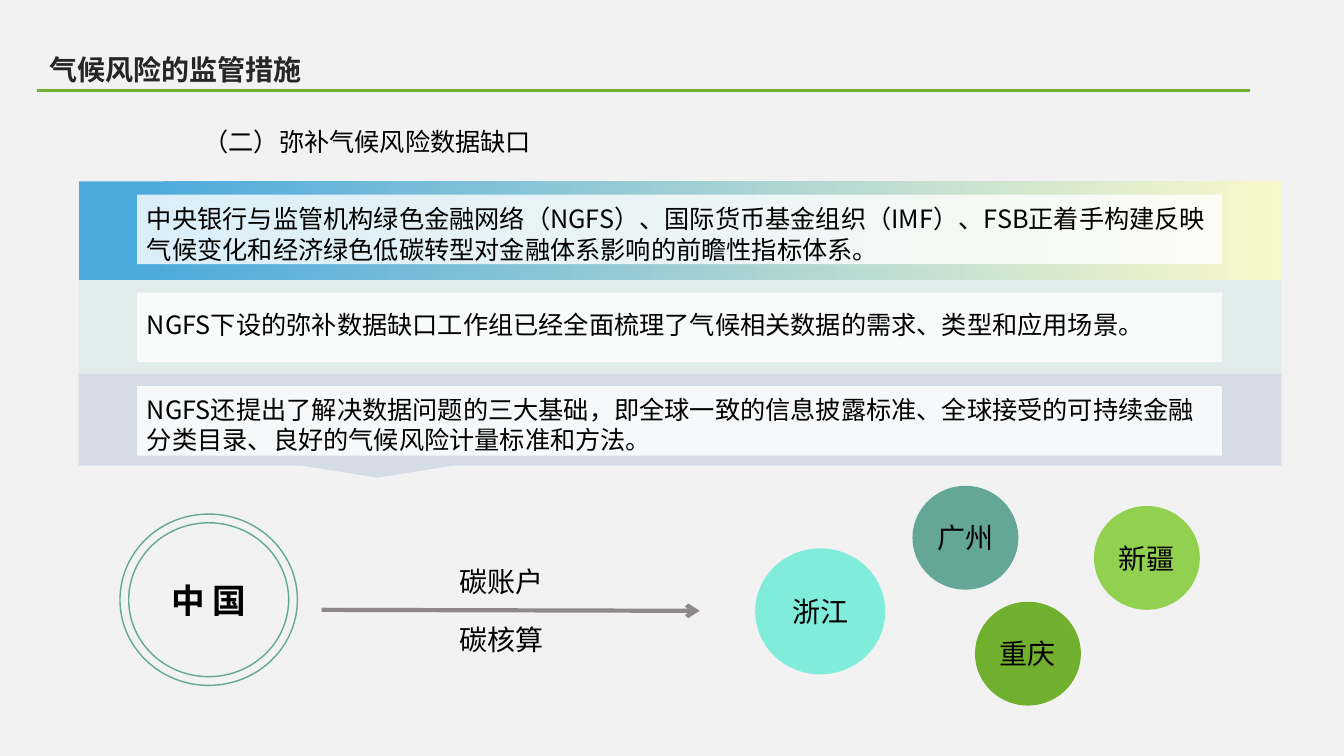
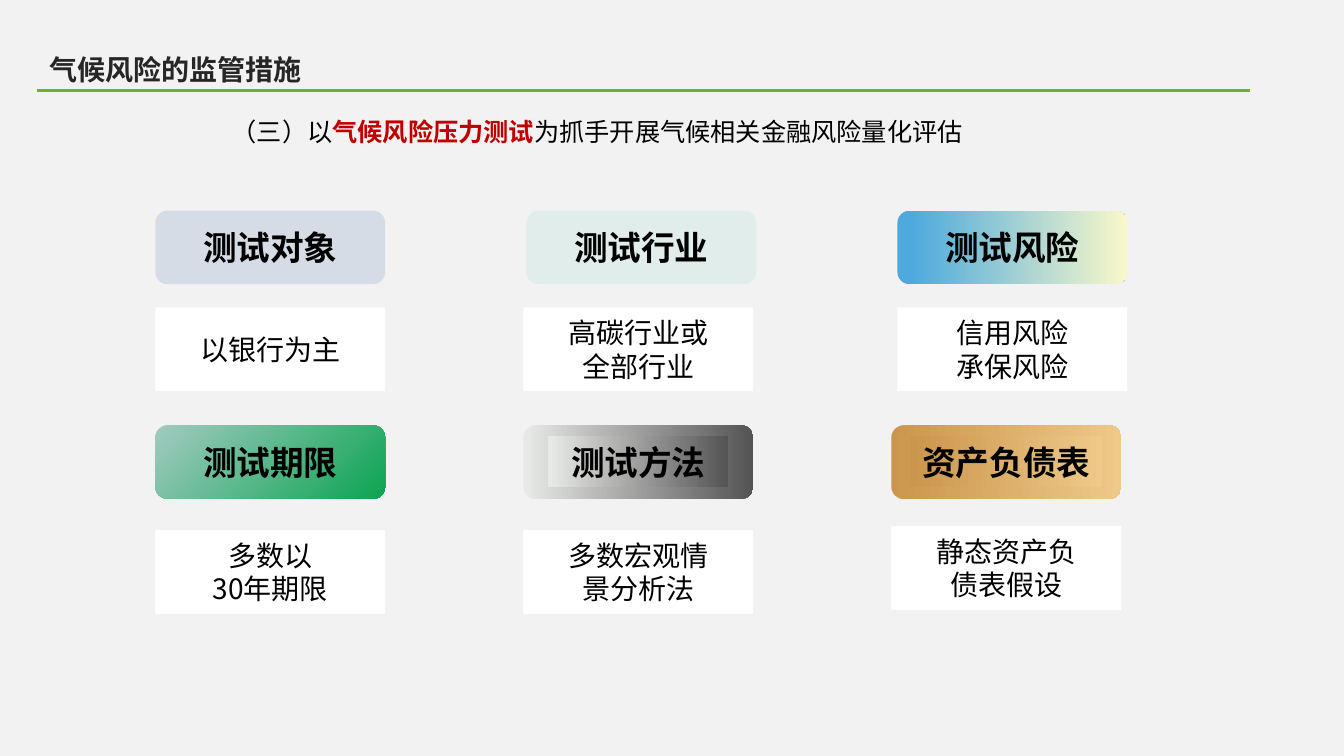
from lxml.etree import SubElement
from pptx import Presentation
from pptx.dml.color import RGBColor
from pptx.enum.lang import MSO_LANGUAGE_ID
from pptx.enum.shapes import MSO_CONNECTOR, MSO_SHAPE
from pptx.enum.text import MSO_ANCHOR, PP_ALIGN
from pptx.oxml.ns import qn
from pptx.util import Inches, Pt

BACKGROUND = RGBColor(0xF2, 0xF2, 0xF2)
WHITE = RGBColor(0xFF, 0xFF, 0xFF)
BLACK = RGBColor(0x00, 0x00, 0x00)
CHARCOAL = RGBColor(0x26, 0x26, 0x26)
ARROW_GREY = RGBColor(0x8D, 0x89, 0x88)
RED = RGBColor(0xC0, 0x00, 0x00)
GREEN = RGBColor(0x71, 0xAF, 0x2F)
LIME = RGBColor(0x92, 0xD0, 0x50)
TEAL = RGBColor(0x64, 0xA7, 0x97)
AQUA = RGBColor(0x7F, 0xED, 0xDA)
PALE_BLUE = RGBColor(0xD6, 0xDC, 0xE5)
PALE_TEAL = RGBColor(0xE0, 0xED, 0xEA)

SKY = [(0.06, RGBColor(0x4E, 0xAA, 0xDD)), (1, RGBColor(0xF9, 0xF8, 0xCA))]
FOREST = [(0, RGBColor(0x0C, 0xA4, 0x51)), (1, RGBColor(0xA2, 0xCA, 0xC1))]
STEEL = [(0.01, RGBColor(0xE7, 0xE9, 0xE6)), (1, RGBColor(0x54, 0x54, 0x54))]
BRONZE = [(0, RGBColor(0xCB, 0x95, 0x4D)), (1, RGBColor(0xEE, 0xC9, 0x88))]

HEADING_FONT = "Noto Sans CJK JP"
BODY_FONT = "Noto Sans CJK SC"

TITLE = "气候风险的监管措施"
DATA_GAP_HEADING = [("（二）弥补气候风险数据缺口", BLACK, False)]
STRESS_TEST_HEADING = [
    ("（三）以", BLACK, False),
    ("气候风险压力测试", RED, True),
    ("为抓手开展气候相关金融风险量化评估", BLACK, False),
]

# top, bottom, notch left, notch depth, fill, panel top, text inset, text
BANDS = [
    (1.8, 2.8, 8.99, 0.14, SKY, 1.93, 0.09,
     "中央银行与监管机构绿色金融网络（NGFS）、国际货币基金组织（IMF）、FSB正着手构建"
     "反映气候变化和经济绿色低碳转型对金融体系影响的前瞻性指标体系。"),
    (2.78, 3.71, 8.99, 0.12, PALE_TEAL, 2.9, 0.17,
     "NGFS下设的弥补数据缺口工作组已经全面梳理了气候相关数据的需求、类型和应用场景。"),
    (3.71, 4.62, 3, 0.12, PALE_BLUE, 3.83, 0.08,
     "NGFS还提出了解决数据问题的三大基础，即全球一致的信息披露标准、全球接受的可持续金融"
     "分类目录、良好的气候风险计量标准和方法。"),
]
BAND_LEFT, BAND_RIGHT, NOTCH_WIDTH = 0.78, 12.71, 1.49

ARROW_LABELS = [("碳账户", 5.55), ("碳核算", 6.13)]
REGIONS = [
    ("浙江", (7.49, 5.44, 1.29, 1.25), AQUA),
    ("广州", (9.05, 4.82, 1.05, 1.03), TEAL),
    ("重庆", (9.67, 5.97, 1.05, 1.03), GREEN),
    ("新疆", (10.85, 5.02, 1.05, 1.03), LIME),
]

CARD_LEFT, CARD_WIDTH, HEADER_HEIGHT, BODY_HEIGHT = 1.54, 2.28, 0.73, 0.83
# header top, body top, column pitch, cards
# card: title, body paragraphs, fill, inner plate width, body shift
CARD_ROWS = [
    (2.09, 3.05, 3.68, [
        ("测试对象", ["以银行为主"], PALE_BLUE, 0, (0, 0)),
        ("测试行业", ["高碳行业或全部行业"], PALE_TEAL, 0, (-0.03, 0)),
        ("测试风险", ["信用风险", "承保风险"], SKY, 0, (0, 0)),
    ]),
    (4.22, 5.26, 3.65, [
        ("测试期限", ["多数以", "30年期限"], FOREST, 0, (0, 0)),
        ("测试方法", ["多数宏观情景分析法"], STEEL, 1.79, (0, 0)),
        ("资产负债表", ["静态资产负债表假设"], BRONZE, 1.9, (0, -0.04)),
    ]),
]


def paint(shape, fill):
    shape.shadow.inherit = False
    shape.line.fill.background()
    if fill is None:
        shape.fill.background()
    elif isinstance(fill, list):
        shape.fill.gradient()
        shape.fill.gradient_angle = 0
        for stop, (position, color) in zip(shape.fill.gradient_stops, fill):
            stop.position = position
            stop.color.rgb = color
    else:
        shape.fill.solid()
        shape.fill.fore_color.rgb = fill


def add_shape(slide, kind, box, fill):
    shape = slide.shapes.add_shape(kind, *map(Inches, box))
    paint(shape, fill)
    return shape


def radiate_from_corner(shape):
    gradient = shape.fill._xPr.find(qn("a:gradFill"))
    gradient.remove(gradient.find(qn("a:lin")))
    radial = SubElement(gradient, qn("a:path"), path="circle")
    SubElement(radial, qn("a:fillToRect"), l="100000", t="100000")


def set_transparent(shape, opacity):
    color = shape.fill._xPr.find(qn("a:solidFill"))[0]
    SubElement(color, qn("a:alpha"), val=str(opacity * 1000))


def write(shape, paragraphs, size, font_name=BODY_FONT, align=PP_ALIGN.CENTER,
          anchor=MSO_ANCHOR.MIDDLE, wrap=True):
    frame = shape.text_frame
    frame.word_wrap = wrap
    frame.vertical_anchor = anchor
    for index, runs in enumerate(paragraphs):
        paragraph = frame.add_paragraph() if index else frame.paragraphs[0]
        paragraph.alignment = align
        for text, color, bold in runs:
            run = paragraph.add_run()
            run.text = text
            run.font.size = Pt(size)
            run.font.bold = bold
            run.font.color.rgb = color
            run.font.name = font_name
            run.font.language_id = MSO_LANGUAGE_ID.SIMPLIFIED_CHINESE
            SubElement(run.font._element, qn("a:ea"), typeface=font_name)


def add_text(slide, box, runs, size, **style):
    textbox = slide.shapes.add_textbox(*map(Inches, box))
    write(textbox, [runs], size, anchor=MSO_ANCHOR.TOP, **style)


def add_line(slide, start, end, color, width):
    connector = slide.shapes.add_connector(
        MSO_CONNECTOR.STRAIGHT, *map(Inches, start + end))
    connector.line.color.rgb = color
    connector.line.width = Pt(width)
    SubElement(connector._element.spPr, qn("a:effectLst"))
    return connector


def add_titled_slide(presentation, heading, heading_box):
    slide = presentation.slides.add_slide(presentation.slide_layouts[6])
    style = {"font_name": HEADING_FONT, "align": PP_ALIGN.LEFT}
    add_text(slide, (0.39, 0.47, 5.62, 0.44), [(TITLE, CHARCOAL, True)], 20, **style)
    add_line(slide, (0.37, 0.9), (12.4, 0.9), GREEN, 2.5)
    add_text(slide, heading_box, heading, 18, **style)
    return slide


def add_band(slide, top, bottom, notch_left, depth, fill):
    outline = [
        (BAND_LEFT, bottom),
        (notch_left, bottom),
        (notch_left + NOTCH_WIDTH / 2, bottom + depth),
        (notch_left + NOTCH_WIDTH, bottom),
        (BAND_RIGHT, bottom),
        (BAND_RIGHT, top),
    ]
    builder = slide.shapes.build_freeform(Inches(BAND_LEFT), Inches(top))
    builder.add_line_segments([(Inches(x), Inches(y)) for x, y in outline])
    paint(builder.convert_to_shape(), fill)


def build_data_gap_slide(presentation):
    slide = add_titled_slide(presentation, DATA_GAP_HEADING, (1.92, 1.2, 9.5, 0.4))
    for *band, panel_top, inset, text in BANDS:
        add_band(slide, *band)
        panel = add_shape(slide, MSO_SHAPE.RECTANGLE,
                          (1.36, panel_top, 10.76, 0.69), WHITE)
        set_transparent(panel, 80)
        panel.text_frame.margin_top = Inches(inset)
        panel.text_frame.margin_bottom = 0
        write(panel, [[(text, BLACK, False)]], 18,
              align=PP_ALIGN.LEFT, anchor=MSO_ANCHOR.TOP)

    ring = add_shape(slide, MSO_SHAPE.DONUT, (1.19, 5.1, 1.76, 1.7), None)
    ring.adjustments[0] = 0.051
    ring.line.color.rgb = TEAL
    ring.line.width = Pt(1)
    write(ring, [[("中 国", BLACK, True)]], 24, wrap=False)

    arrow = add_line(slide, (3.19, 6.05), (6.94, 6.06), ARROW_GREY, 3)
    SubElement(arrow.line._get_or_add_ln(), qn("a:tailEnd"), type="arrow")
    for label, top in ARROW_LABELS:
        add_text(slide, (3.19, top, 3.57, 0.44), [(label, BLACK, False)], 20)
    for name, box, fill in REGIONS:
        circle = add_shape(slide, MSO_SHAPE.OVAL, box, fill)
        write(circle, [[(name, BLACK, False)]], 20, wrap=False)


def build_stress_test_slide(presentation):
    slide = add_titled_slide(presentation, STRESS_TEST_HEADING, (2.2, 1.1, 8.93, 0.4))
    for header_top, body_top, pitch, cards in CARD_ROWS:
        for column, (title, lines, fill, plate_width, shift) in enumerate(cards):
            left = CARD_LEFT + column * pitch
            header = add_shape(slide, MSO_SHAPE.ROUNDED_RECTANGLE,
                               (left, header_top, CARD_WIDTH, HEADER_HEIGHT), fill)
            if fill is FOREST:
                radiate_from_corner(header)
            if plate_width:
                plate_left = left + (CARD_WIDTH - plate_width) / 2
                header = add_shape(slide, MSO_SHAPE.RECTANGLE,
                                   (plate_left, header_top + 0.11, plate_width, 0.5), fill)
            write(header, [[(title, BLACK, True)]], 24, HEADING_FONT)

            body = add_shape(slide, MSO_SHAPE.RECTANGLE,
                             (left + shift[0], body_top + shift[1],
                              CARD_WIDTH, BODY_HEIGHT), WHITE)
            body.text_frame.margin_left = body.text_frame.margin_right = Inches(0.36)
            write(body, [[(line, BLACK, False)] for line in lines], 20)


def main():
    presentation = Presentation()
    presentation.slide_width = Inches(13.33)
    presentation.slide_height = Inches(7.5)
    background = presentation.slide_master.background.fill
    background.solid()
    background.fore_color.rgb = BACKGROUND
    build_data_gap_slide(presentation)
    build_stress_test_slide(presentation)
    presentation.save("out.pptx")


if __name__ == "__main__":
    main()
